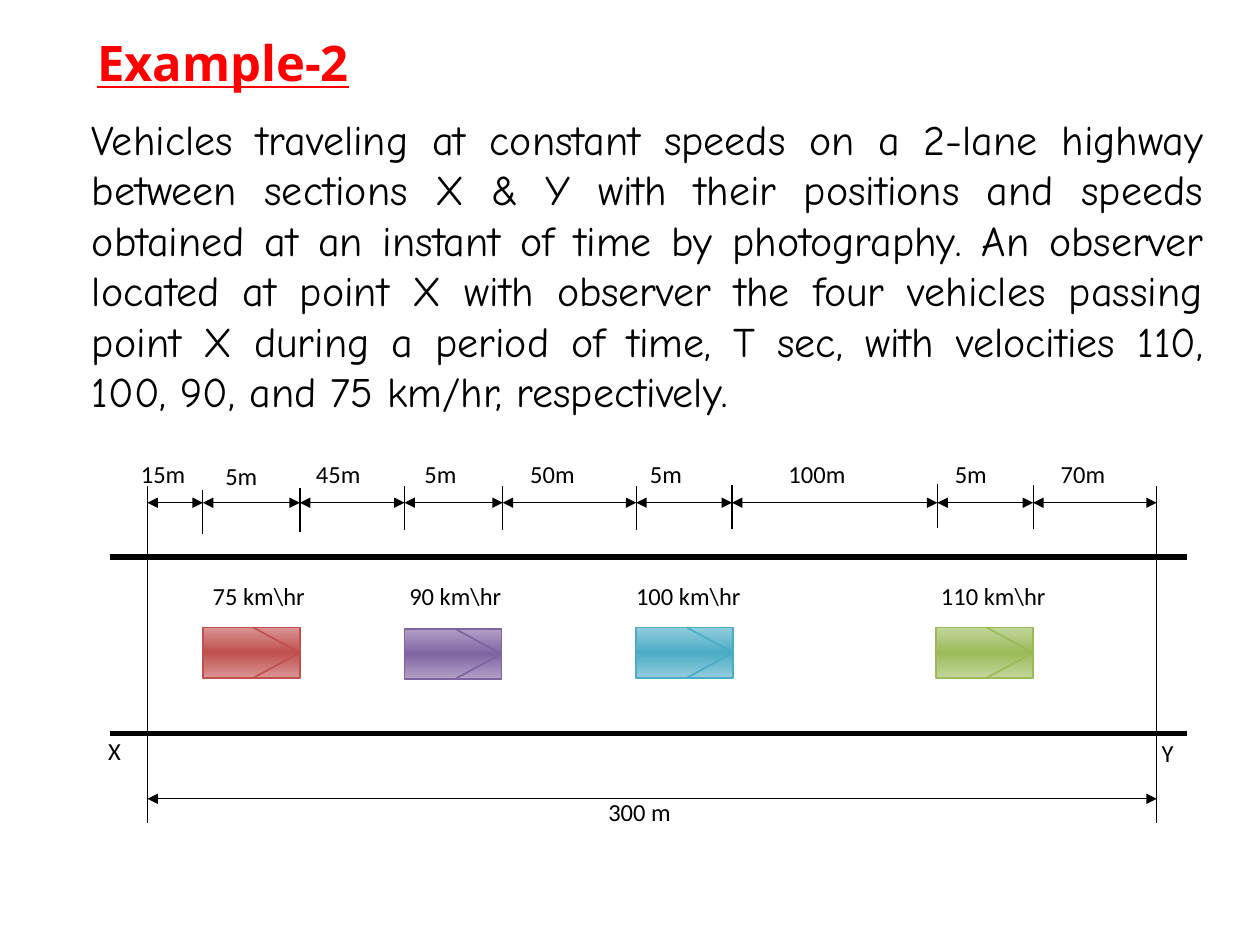
"""Build the slide on vehicle spacing and speeds between X and Y."""
import copy
import pptx
import pptx.util
import pptx.dml.color
import pptx.enum.shapes
import pptx.enum.text
import pptx.oxml.ns
import lxml.etree

Inches, Pt = pptx.util.Inches, pptx.util.Pt
qn = pptx.oxml.ns.qn
TITLE = "Example-2"
BODY = (
    "Vehicles traveling at constant speeds on a 2-lane highway between sections X & Y "
    "with their positions and speeds obtained at an instant of time by photography. "
    "An observer located at point X with observer the four vehicles passing point X "
    "during a period of time, T sec, with velocities 110, 100, 90, and 75 km/hr, respectively."
)
TICKS = [(1.61, 3.89), (2.38, 3.87), (3.21, 3.86), (3.99, 3.86),
         (5.05, 3.86), (5.81, 3.85), (7.44, 3.84), (8.2, 3.85)]
ENDS = (1.17, 9.18)
GAPS = [("15m", 1.02), ("5m", 1.69), ("45m", 2.41), ("5m", 3.27), ("50m", 4.11),
        ("5m", 5.06), ("100m", 6.16), ("5m", 7.48), ("70m", 8.32)]
CARS = [
    ("75 km\\hr", 1.59, 1.61, 4.98, "C0504D", "D99594"),
    ("90 km\\hr", 3.15, 3.21, 4.99, "8064A2", "B2A1C7"),
    ("100 km\\hr", 4.95, 5.05, 4.98, "4BACC6", "92CDDC"),
    ("110 km\\hr", 7.37, 7.43, 4.98, "9BBB59", "C2D69B"),
]
MARKS = [("X", 0.76, 5.79), ("Y", 9.12, 5.81), ("300 m", 4.73, 6.28)]
CAR_W, CAR_H, NOSE = 0.77, 0.4, 0.37


def rgb(code):
    return pptx.dml.color.RGBColor.from_string(code)


def place(shape, x, y, w, h):
    shape.left, shape.top, shape.width, shape.height = map(Inches, (x, y, w, h))


def style(para, face, size, color="000000"):
    font = para.runs[0].font
    font.name, font.size, font.color.rgb = face, Pt(size), rgb(color)
    return font


def label(text, x, y, w=1.46):
    frame = slide.shapes.add_textbox(*map(Inches, (x, y, w, 0.51))).text_frame
    frame.word_wrap = True
    frame.text = text
    style(frame.paragraphs[0], "Calibri", 14)


def line(x1, y1, x2, y2, color="000000", width=0.75, arrows=False):
    kind = pptx.enum.shapes.MSO_CONNECTOR.STRAIGHT
    link = slide.shapes.add_connector(kind, *map(Inches, (x1, y1, x2, y2)))
    link.line.color.rgb, link.line.width = rgb(color), Pt(width)
    if arrows:
        for end in ("a:headEnd", "a:tailEnd"):
            lxml.etree.SubElement(link.line._get_or_add_ln(), qn(end), type="triangle")
    lxml.etree.SubElement(link._element.spPr, qn("a:effectLst"))


def car(x, y, dark, light):
    kind = pptx.enum.shapes.MSO_SHAPE.RECTANGLE
    box = slide.shapes.add_shape(kind, *map(Inches, (x, y, CAR_W, CAR_H)))
    box.shadow.inherit = False
    box.fill.gradient()
    box.fill.gradient_angle = 90
    stops = box._element.spPr.find(".//" + qn("a:gsLst"))
    stops.insert(1, copy.deepcopy(stops[0]))
    for stop, pos, color in zip(box.fill.gradient_stops, (0, 0.5, 1), (light, dark, light)):
        stop.position, stop.color.rgb = pos, rgb(color)
    box.line.color.rgb, box.line.width = rgb(dark), Pt(1)
    tip = x + CAR_W
    for side in (y, y + CAR_H):
        line(tip, y + CAR_H / 2, tip - NOSE, side, dark, 1)


deck = pptx.Presentation()
deck.slide_width, deck.slide_height = Inches(10), Inches(7.5)
slide = deck.slides.add_slide(deck.slide_layouts[1])
title, body = slide.placeholders

place(title, 0.67, 0.21, 2.39, 0.57)
title.text_frame.text = TITLE
title.text_frame.word_wrap = False
title.text_frame.vertical_anchor = pptx.enum.text.MSO_ANCHOR.TOP
head = title.text_frame.paragraphs[0]
head.alignment = pptx.enum.text.PP_ALIGN.LEFT
font = style(head, "Open Sans", 28, "FF0000")
font.bold = font.underline = True

place(body, 0.63, 0.84, 9.02, 2.52)
body.text_frame.text = BODY
body.text_frame.auto_size = pptx.enum.text.MSO_AUTO_SIZE.NONE
body.text_frame.vertical_anchor = pptx.enum.text.MSO_ANCHOR.MIDDLE
para = body.text_frame.paragraphs[0]
para.alignment = pptx.enum.text.PP_ALIGN.JUSTIFY
para.space_before = Pt(0)
props = para._p.get_or_add_pPr()
props.set("marL", "0")
props.set("indent", "0")
lxml.etree.SubElement(props, qn("a:buNone"))
style(para, "Comic Neue", 24)

for x, top in TICKS:
    line(x, top + 0.35, x, top)
for y in (4.42, 5.82):
    line(0.87, y, 9.42, y, width=3)
for x in ENDS:
    line(x, 3.86, x, 6.53)
for text, left, x, y, dark, light in CARS:
    car(x, y, dark, light)
    label(text, left, 4.56)

edges = [ENDS[0], *(x for x, top in TICKS), ENDS[1]]
for start, stop, (text, left) in zip(edges, edges[1:], GAPS):
    line(start, 3.99, stop, 3.99, arrows=True)
    label(text, left, 3.61 if left == 1.69 else 3.59, 0.9)
line(ENDS[0], 6.34, ENDS[1], 6.34, arrows=True)
for text, x, y in MARKS:
    label(text, x, y, 0.97 if len(text) > 1 else 0.41)

deck.save("out.pptx")
